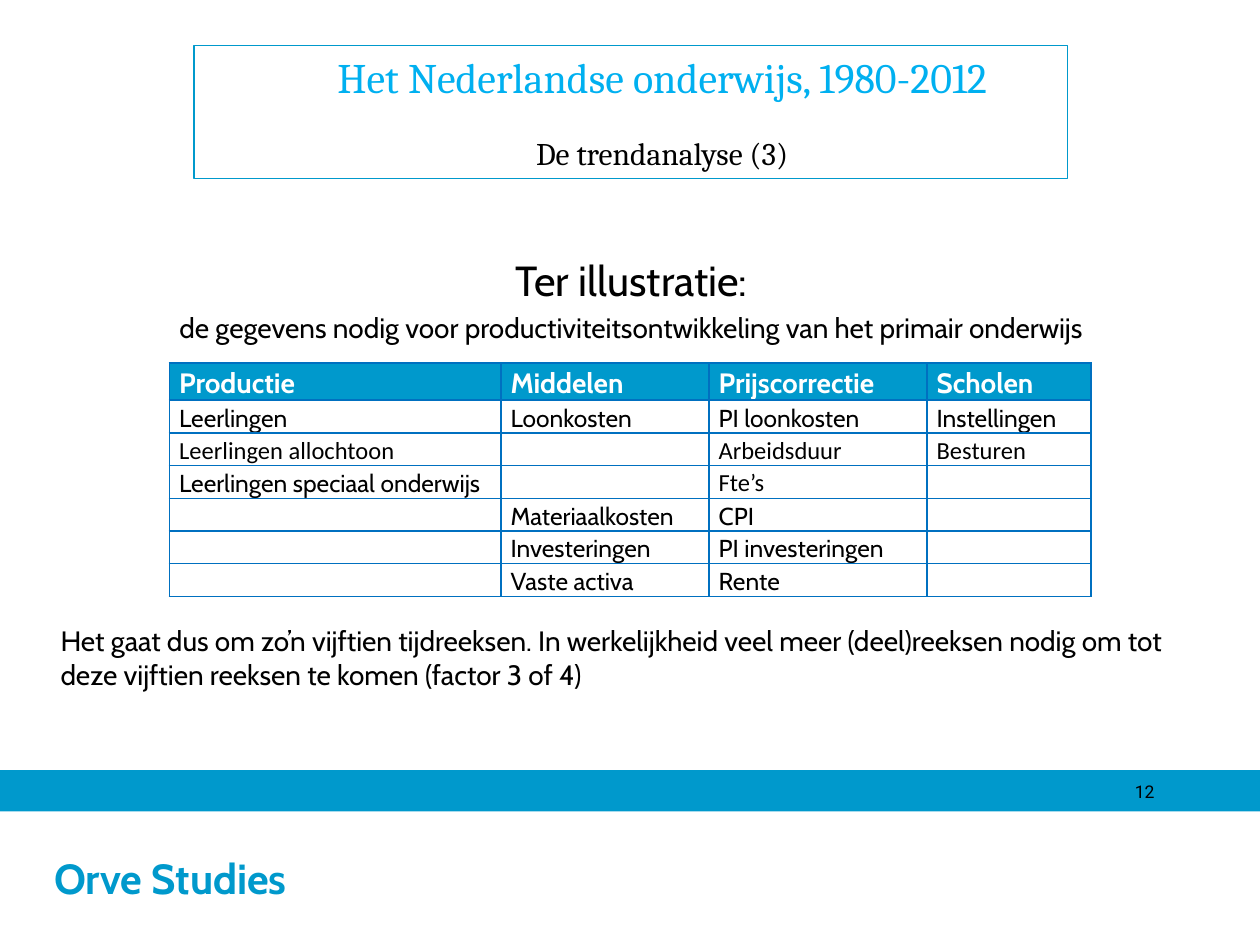
from dataclasses import dataclass
from lxml.etree import SubElement
from pptx import Presentation
from pptx.dml.color import RGBColor
from pptx.enum.shapes import MSO_SHAPE
from pptx.enum.text import MSO_ANCHOR, MSO_AUTO_SIZE, PP_ALIGN
from pptx.oxml.ns import qn
from pptx.util import Pt


@dataclass(frozen=True)
class Theme:
    band: str = "0099CC"
    title: str = "00B0F0"
    border: str = "0070C0"
    ink: str = "000000"
    paper: str = "FFFFFF"
    sans: str = "Cabin"
    serif: str = "Cambria"
    alt: str = "Calibri"
    number: str = "Roboto"
    large: float = 24
    medium: float = 18
    body: float = 16
    cell: float = 14
    small: float = 10


@dataclass(frozen=True)
class Box:
    left: float
    top: float
    width: float
    height: float

    def lengths(self) -> tuple:
        return Pt(self.left), Pt(self.top), Pt(self.width), Pt(self.height)


@dataclass(frozen=True)
class Line:
    text: str
    size: float
    color: str = "000000"
    font: str = "Cabin"
    bold: bool = False
    align: PP_ALIGN = PP_ALIGN.CENTER
    before: float = 0
    after: float = 0


T = Theme()
BANDS = [Box(0, 457.9, 720, 22.3), Box(0, 440.6, 720, 17.3)]
FOOTER = Box(0, 463.7, 720, 76.3)
TITLE = Box(110.9, 25.9, 499, 76.3)
INTRO = Box(34.6, 145.4, 652.3, 52)
CLOSING = Box(34.6, 356.5, 652.3, 42)
NUMBER = Box(509.8, 442.8, 149.8, 18)
TABLE = Box(96.8, 207.4, 526.7, 133.5)
COL_WIDTHS = [189.4, 118.9, 124.6, 93.8]
HEAD_HEIGHT, ROW_HEIGHT = 21.3, 18.7
ROWS = [
    ["Productie", "Middelen", "Prijscorrectie", "Scholen"],
    ["Leerlingen", "Loonkosten", "PI loonkosten", "Instellingen"],
    ["Leerlingen allochtoon", "", "Arbeidsduur", "Besturen"],
    ["Leerlingen speciaal onderwijs", "", "Fte’s", ""],
    ["", "Materiaalkosten", "CPI", ""],
    ["", "Investeringen", "PI investeringen", ""],
    ["", "Vaste activa", "Rente", ""],
]
ALT_CELLS = {"Leerlingen allochtoon", "Arbeidsduur", "Besturen", "Fte’s"}


def rgb(color: str) -> RGBColor:
    return RGBColor.from_string(color)


def set_margins(tf, left: float, top: float, right: float, bottom: float) -> None:
    tf.margin_left, tf.margin_top = Pt(left), Pt(top)
    tf.margin_right, tf.margin_bottom = Pt(right), Pt(bottom)


def write(tf, lines: list[Line]) -> None:
    for i, line in enumerate(lines):
        p = tf.paragraphs[0] if i == 0 else tf.add_paragraph()
        p.alignment = line.align
        p.space_before, p.space_after = Pt(line.before), Pt(line.after)
        r = p.add_run()
        r.text = line.text
        r.font.name, r.font.size, r.font.bold = line.font, Pt(line.size), line.bold
        r.font.color.rgb = rgb(line.color)


def add_rect(s, box: Box, color: str, outlined: bool):
    sp = s.shapes.add_shape(MSO_SHAPE.RECTANGLE, *box.lengths())
    sp.shadow.inherit = False
    sp.fill.solid()
    sp.fill.fore_color.rgb = rgb(color)
    if outlined:
        sp.line.color.rgb = rgb(color)
        sp.line.width = Pt(0.75)
    else:
        sp.line.fill.background()
    return sp


def add_text(s, box: Box, lines: list[Line], inset: float = 0) -> None:
    tf = s.shapes.add_textbox(*box.lengths()).text_frame
    tf.word_wrap = True
    set_margins(tf, 0, inset, 0, inset)
    write(tf, lines)


def add_title(s) -> None:
    sp = s.shapes.title
    sp.left, sp.top, sp.width, sp.height = TITLE.lengths()
    sp.line.color.rgb = rgb(T.band)
    sp.line.width = Pt(0.75)
    tf = sp.text_frame
    tf.auto_size = MSO_AUTO_SIZE.NONE
    tf.word_wrap = True
    tf.vertical_anchor = MSO_ANCHOR.TOP
    set_margins(tf, 43.2, 3.6, 7.2, 3.6)
    write(tf, [
        Line("Het Nederlandse onderwijs, 1980-2012", T.large, T.title, T.serif, after=18),
        Line("De trendanalyse (3)", T.medium, T.ink, T.serif, after=18),
    ])


def border_cell(cell) -> None:
    tc_pr = cell._tc.get_or_add_tcPr()
    for i, side in enumerate(("a:lnL", "a:lnR", "a:lnT", "a:lnB")):
        ln = tc_pr.makeelement(qn(side), {"w": str(Pt(1))})
        SubElement(SubElement(ln, qn("a:solidFill")), qn("a:srgbClr"), val=T.border)
        tc_pr.insert(i, ln)


def fill_cell(cell, text: str, head: bool) -> None:
    cell.vertical_anchor = MSO_ANCHOR.BOTTOM
    set_margins(cell, 5.6, 0.6, 0.6, 0)
    if head:
        cell.fill.solid()
        cell.fill.fore_color.rgb = rgb(T.band)
    else:
        cell.fill.background()
    border_cell(cell)
    p = cell.text_frame.paragraphs[0]
    p.line_spacing = 1.07
    if text:
        font = T.alt if text in ALT_CELLS else T.sans
        size, color = (T.body, T.paper) if head else (T.cell, T.ink)
        write(cell.text_frame, [Line(text, size, color, font, head, PP_ALIGN.LEFT)])
    else:
        SubElement(p._p, qn("a:endParaRPr"), sz=str(T.small * 100))


def add_data_table(s) -> None:
    table = s.shapes.add_table(len(ROWS), len(COL_WIDTHS), *TABLE.lengths()).table
    table.first_row = table.horz_banding = False
    for column, width in zip(table.columns, COL_WIDTHS):
        column.width = Pt(width)
    for i, texts in enumerate(ROWS):
        table.rows[i].height = Pt(ROW_HEIGHT if i else HEAD_HEIGHT)
        for j, text in enumerate(texts):
            fill_cell(table.cell(i, j), text, i == 0)


def add_footer(s) -> None:
    lower, upper = BANDS
    add_rect(s, lower, T.band, True)
    tf = add_rect(s, FOOTER, T.paper, False).text_frame
    tf.word_wrap = True
    tf.vertical_anchor = MSO_ANCHOR.MIDDLE
    set_margins(tf, 31, 3.6, 7.2, 3.6)
    write(tf, [Line("Orve Studies", T.large, T.band, bold=True, align=PP_ALIGN.LEFT)])
    add_rect(s, upper, T.band, True)
    add_text(s, NUMBER, [Line("12", T.small, font=T.number, align=PP_ALIGN.RIGHT)], 3.6)


def main() -> None:
    prs = Presentation()
    prs.slide_width, prs.slide_height = Pt(720), Pt(540)
    s = prs.slides.add_slide(prs.slide_layouts[5])
    add_footer(s)
    add_title(s)
    add_text(s, INTRO, [
        Line("Ter illustratie:", T.large),
        Line("de gegevens nodig voor productiviteitsontwikkeling van het primair onderwijs",
             T.body, before=3),
    ])
    add_text(s, CLOSING, [
        Line("Het gaat dus om zo’n vijftien tijdreeksen. In werkelijkheid veel meer "
             "(deel)reeksen nodig om tot deze vijftien reeksen te komen (factor 3 of 4)",
             T.body, align=PP_ALIGN.LEFT),
    ])
    add_data_table(s)
    prs.save("out.pptx")


if __name__ == "__main__":
    main()
